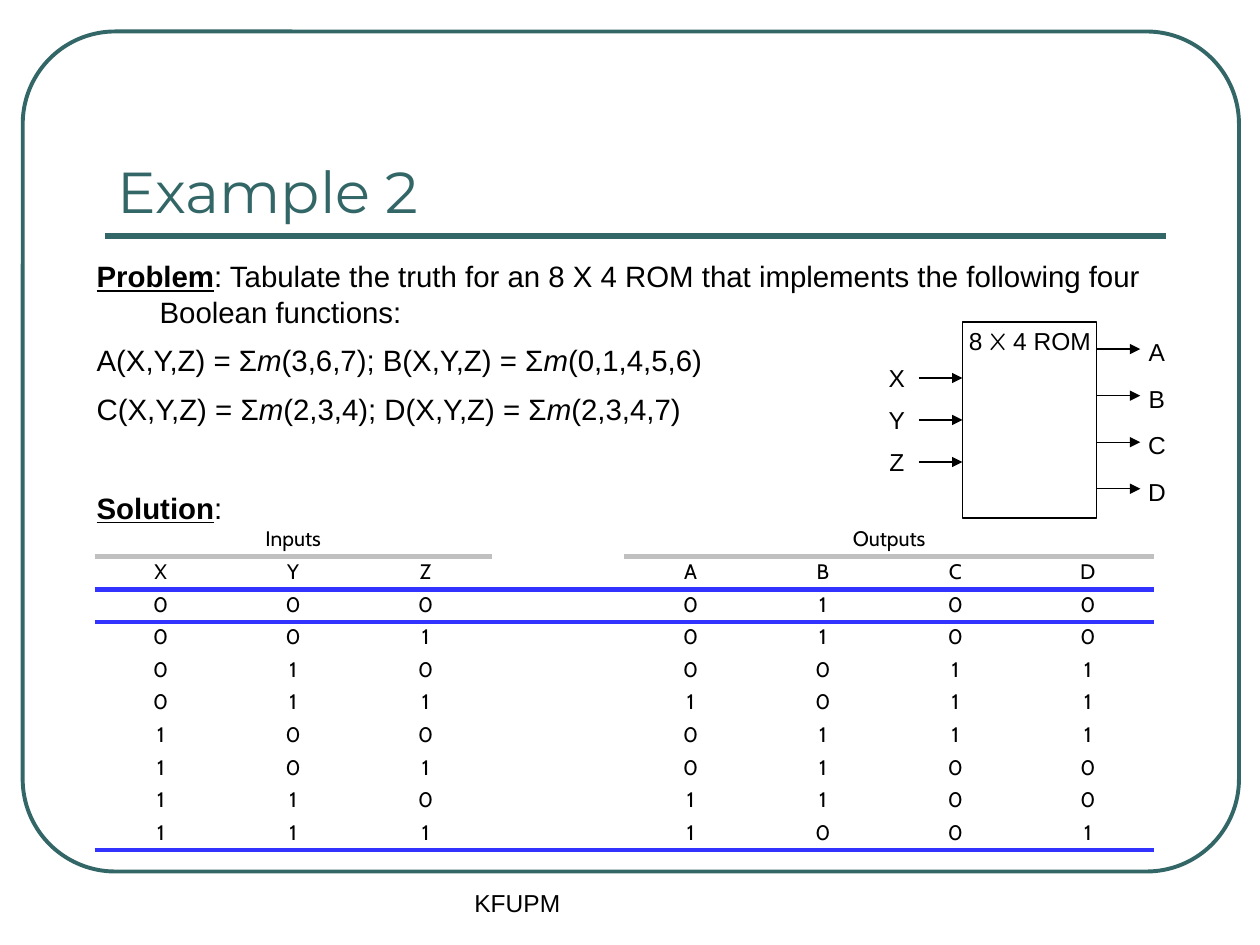
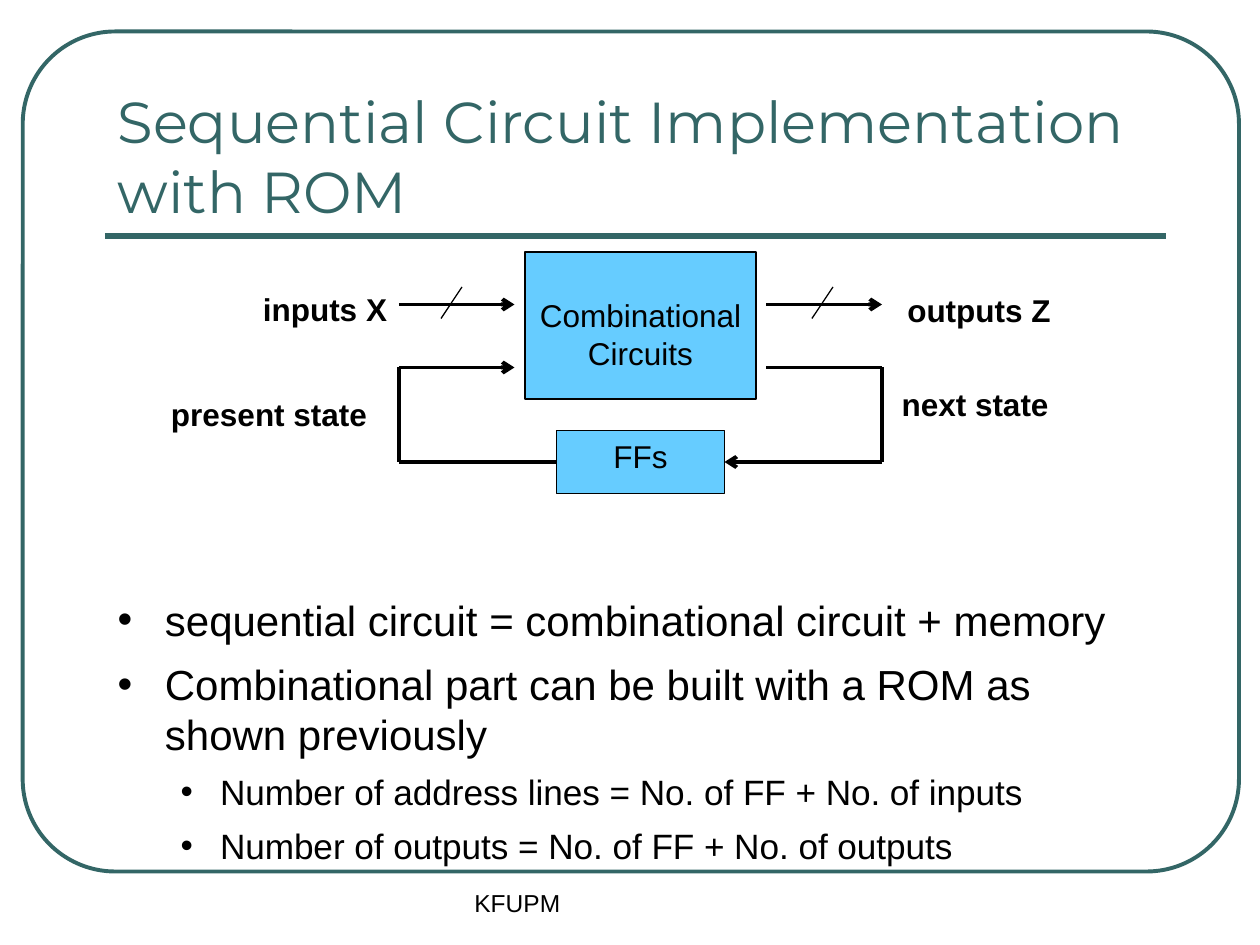
from lxml import etree
from pptx import Presentation
from pptx import util as u
from pptx.dml import color as dml
from pptx.enum import shapes, text
from pptx.oxml import ns

TEAL, BLACK, SKY, GREY, BLUE = "336666", "000000", "66CCFF", "C0C0C0", "3333FF"
LEFT, CENTER = text.PP_ALIGN.LEFT, text.PP_ALIGN.CENTER
NO_STYLE = "{2D5ABB26-0587-4C30-8999-92F81FD0307C}"


def rgb(value):
    return dml.RGBColor.from_string(value)


def points(*lengths):
    return [u.Pt(length) for length in lengths]


def add_xml(parent, tag, **attributes):
    return etree.SubElement(parent, ns.qn(tag), attributes)


def write(paragraph, runs, size=14, font="Arial", color=BLACK, align=LEFT, before=0, **style):
    paragraph.alignment = align
    paragraph.space_before = u.Pt(before)
    for piece in [runs] if isinstance(runs, str) else runs:
        words, changes = (piece, {}) if isinstance(piece, str) else piece
        look = {"name": font, **style, **changes}
        run = paragraph.add_run()
        run.text = words
        run.font.size = u.Pt(size)
        run.font.color.rgb = rgb(color)
        for key, value in look.items():
            setattr(run.font, key, value)


def set_indent(paragraph, margin, hanging, bullet=None):
    properties = paragraph._p.get_or_add_pPr()
    properties.set("marL", str(u.Pt(margin)))
    properties.set("indent", str(-u.Pt(hanging)))
    if bullet:
        add_xml(properties, "a:buFont", typeface="Arial")
        add_xml(properties, "a:buChar", char=bullet)
    else:
        add_xml(properties, "a:buNone")


class Deck:
    def __init__(self):
        self.file = Presentation()
        self.file.slide_width, self.file.slide_height = points(720, 540)
        self.slide = None

    def new_slide(self, title):
        self.slide = self.file.slides.add_slide(self.file.slide_layouts[1])
        frame = self.block(13, 18, 695, 480, TEAL, 2.25, kind=shapes.MSO_SHAPE.ROUNDED_RECTANGLE)
        frame.adjustments[0] = 0.11
        self.line((60, 134.8), (666, 134.8), 3, color=TEAL)
        heading = self.place(self.slide.shapes.title, 60, 42, 605.5, 90)
        heading.vertical_anchor = text.MSO_ANCHOR.BOTTOM
        write(heading.paragraphs[0], title, 33, "Montserrat", TEAL)
        self.label("KFUPM", 264, 504, 228, 36, align=LEFT)

    def place(self, holder, *box):
        holder.left, holder.top, holder.width, holder.height = points(*box)
        holder.text_frame.auto_size = text.MSO_AUTO_SIZE.NONE
        holder.text_frame.word_wrap = True
        return holder.text_frame

    def body(self, box, items):
        frame = self.place(self.slide.placeholders[1], *box)
        for index, (runs, level, indent, before, size) in enumerate(items):
            paragraph = frame.add_paragraph() if index else frame.paragraphs[0]
            paragraph.level = level
            set_indent(paragraph, *indent)
            write(paragraph, runs, size, before=before if index else 0)

    def block(self, x, y, w, h, outline=BLACK, weight=0.75, fill=None,
              kind=shapes.MSO_SHAPE.RECTANGLE, lines=(), top=3.6):
        shape = self.slide.shapes.add_shape(kind, *points(x, y, w, h))
        shape.shadow.inherit = False
        shape.line.color.rgb = rgb(outline)
        shape.line.width = u.Pt(weight)
        if fill:
            shape.fill.solid()
            shape.fill.fore_color.rgb = rgb(fill)
        else:
            shape.fill.background()
        frame = shape.text_frame
        frame.vertical_anchor = text.MSO_ANCHOR.TOP
        frame.margin_top = u.Pt(top)
        frame.margin_left = frame.margin_right = u.Pt(4)
        for index, words in enumerate(lines):
            paragraph = frame.add_paragraph() if index else frame.paragraphs[0]
            write(paragraph, words, 18, align=CENTER)
        return shape

    def label(self, runs, x, y, w, h, align=CENTER, **style):
        frame = self.slide.shapes.add_textbox(*points(x, y, w, h)).text_frame
        frame.word_wrap = align == LEFT
        write(frame.paragraphs[0], runs, align=align, **style)

    def line(self, start, end, weight=0.75, head=None, color=BLACK, begin=None, finish=None):
        wire = self.slide.shapes.add_connector(
            shapes.MSO_CONNECTOR.STRAIGHT, *points(*start, *end))
        wire.line.color.rgb = rgb(color)
        wire.line.width = u.Pt(weight)
        if head:
            add_xml(wire.line._get_or_add_ln(), "a:tailEnd", type=head)
        add_xml(wire._element.spPr, "a:effectLst")
        if begin:
            wire.begin_connect(*begin)
        if finish:
            wire.end_connect(*finish)

    def table(self, rows, box):
        table = self.slide.shapes.add_table(len(rows), len(rows[0]), *points(*box)).table
        table.first_row = table.horz_banding = False
        table._tbl.tblPr[0].text = NO_STYLE
        for r, row in enumerate(rows):
            table.rows[r].height = u.Pt(box[3] / len(rows))
            for c, value in enumerate(row):
                cell = table.cell(r, c)
                cell.fill.background()
                cell.margin_left = cell.margin_right = u.Pt(17)
                cell.margin_top = cell.margin_bottom = u.Pt(1.4)
                paragraph = cell.text_frame.paragraphs[0]
                if value:
                    write(paragraph, value, 12, "Cabin", align=CENTER)
                else:
                    add_xml(paragraph._p, "a:endParaRPr", sz="1200")
        return table

    def rule_below(self, table, row, columns, color):
        for r, side in ((row, "a:lnB"), (row + 1, "a:lnT")):
            if r == len(table.rows):
                continue
            for c in columns:
                properties = table.cell(r, c)._tc.get_or_add_tcPr()
                border = add_xml(properties, side, w=str(u.Pt(3)))
                add_xml(add_xml(border, "a:solidFill"), "a:srgbClr", val=color)
                properties.insert(0, border)


def truth_table():
    minterms = {"A": {3, 6, 7}, "B": {0, 1, 4, 5, 6}, "C": {2, 3, 4}, "D": {2, 3, 4, 7}}
    rows = [["Inputs", "", "", "", "Outputs", "", "", ""], ["X", "Y", "Z", "", *minterms]]
    for number in range(8):
        outputs = [str(int(number in terms)) for terms in minterms.values()]
        rows.append([*f"{number:03b}", "", *outputs])
    return rows


def example(deck):
    deck.new_slide("Example 2")
    m = ("m", {"italic": True})
    heading = {"bold": True, "underline": True}
    problem = [
        [("Problem", heading), ": Tabulate the truth for an 8 X 4 ROM that implements "
         "the following four Boolean functions:"],
        ["A(X,Y,Z) = Σ", m, "(3,6,7); B(X,Y,Z) = Σ", m, "(0,1,4,5,6)"],
        ["C(X,Y,Z) = Σ", m, "(2,3,4); D(X,Y,Z) = Σ", m, "(2,3,4,7)"],
        [("Solution", heading), ":"],
    ]
    gaps = (0, 7.8, 7.8, 36)
    deck.body((48, 144, 642, 144),
              [(runs, 0, (36, 36), gap, 16.8) for runs, gap in zip(problem, gaps)])

    table = deck.table(truth_table(), (54, 299.5, 605.6, 186.5))
    table.cell(0, 0).merge(table.cell(0, 2))
    table.cell(0, 4).merge(table.cell(0, 7))
    deck.rule_below(table, 9, range(8), BLUE)
    deck.rule_below(table, 1, range(8), BLUE)
    deck.rule_below(table, 0, (0, 1, 2, 4, 5, 6, 7), GREY)

    rom = deck.block(550, 184, 76.4, 112)
    for index, name in enumerate("XYZ"):
        y = 240 + 24 * (index - 1)
        deck.line((525, y), (550, y), head="triangle", finish=(rom, 1) if name == "Y" else None)
        deck.label(name, 500.5, y - 12.2, 24, 24.5)
    for index, name in enumerate("ABCD"):
        y = 199.5 + 26.6 * index
        deck.line((626.4, y), (651.6, y), head="triangle")
        deck.label(name, 649, y - 10.4, 24, 24.5)
    deck.label(["8 ", ("X", {"name": "Comic Neue"}), " 4 ROM"], 546, 183, 85, 24.5)


def sequential(deck):
    deck.new_slide("Sequential Circuit Implementation with ROM")
    main, detail = (0, (27, 27, "•"), 7.8, 24), (1, (58.5, 22.5, "•"), 6.5, 20.1)
    deck.body((60, 336, 605.5, 138), [
        ("sequential circuit = combinational circuit + memory", *main),
        ("Combinational part can be built with a ROM as shown previously", *main),
        ("Number of address lines = No. of FF + No. of inputs", *detail),
        ("Number of outputs = No. of FF + No. of outputs", *detail),
    ])
    deck.block(300, 144, 132, 84, fill=SKY, lines=("Combinational", "Circuits"), top=25)
    flip_flops = deck.block(318, 246, 96, 36, fill=SKY, lines=("FFs",))

    for start, end, head in (
        ((228, 174), (294, 174), "arrow"),
        ((438, 174), (504, 174), "arrow"),
        ((228, 210), (294, 210), "arrow"),
        ((228, 264), (228, 210), None),
        ((438, 210), (504, 210), None),
        ((504, 210), (504, 264), None),
    ):
        deck.line(start, end, 2.25, head)
    deck.line((318, 264), (228, 264), 2.25, begin=(flip_flops, 1))
    deck.line((504, 264), (414, 264), 2.25, "arrow", finish=(flip_flops, 3))
    for x in (252, 464):
        deck.line((x + 12, 164), (x, 182))

    for signal, x, y, w in (
        ("inputs X", 142.5, 162, 86.5),
        ("outputs Z", 511, 162.7, 97),
        ("next state", 507.5, 216.7, 99.5),
        ("present state", 90, 222, 127.5),
    ):
        deck.label(signal, x, y, w, 29, size=18, bold=True)


def main():
    deck = Deck()
    example(deck)
    sequential(deck)
    deck.file.save("out.pptx")


if __name__ == "__main__":
    main()
